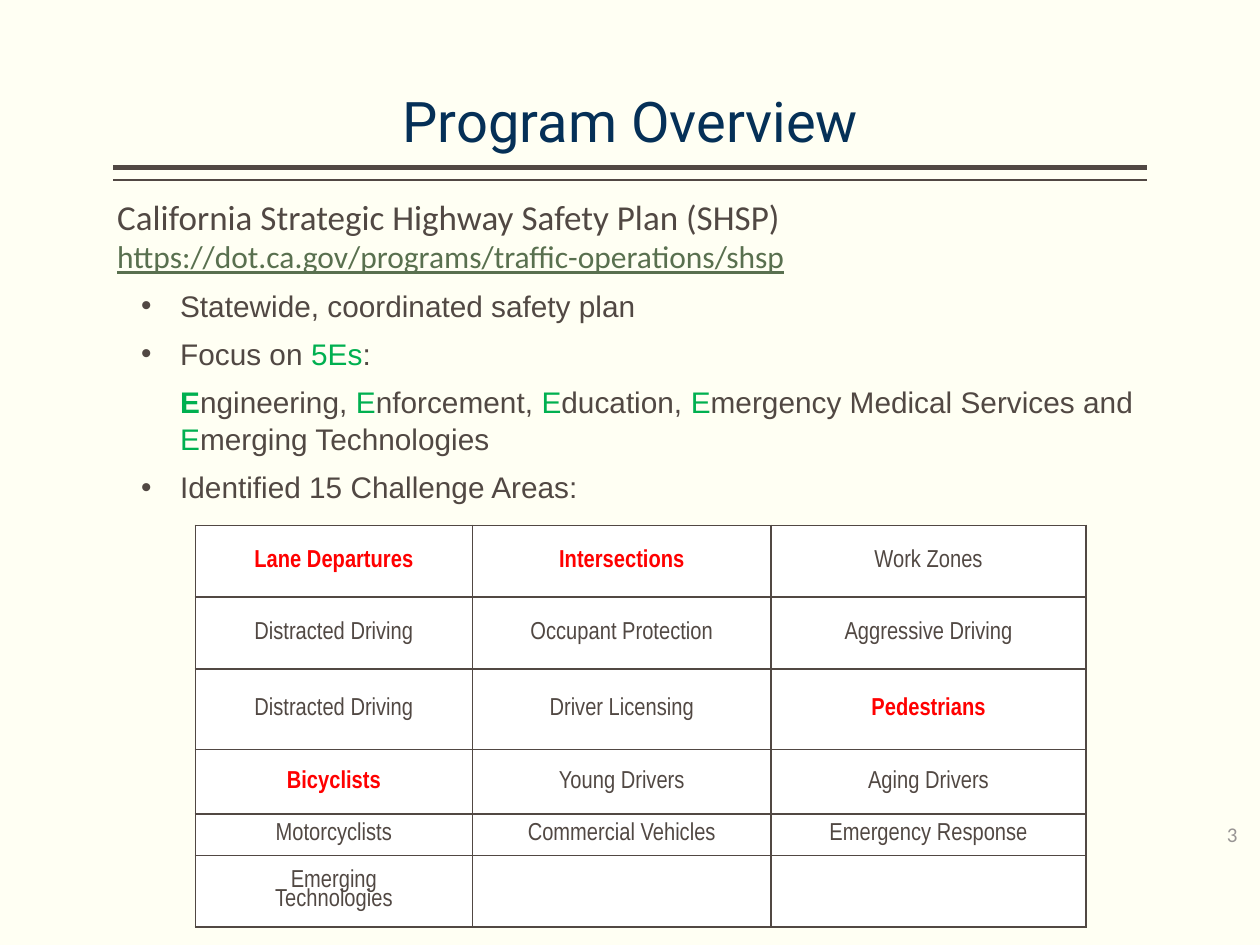
import pptx
import pptx.util
import pptx.dml.color
import pptx.enum.shapes
import pptx.enum.text
from lxml import etree

INK, GREEN, RED = "514843", "00B050", "FF0000"
SLIDE_WIDTH, SLIDE_HEIGHT = 10, 7.5
GRID_COLUMNS = 100
ALIGN = pptx.enum.text.PP_ALIGN
ANCHOR = pptx.enum.text.MSO_ANCHOR

CHALLENGE_AREAS = [
    ["Lane Departures", "Intersections", "Work Zones"],
    ["Distracted Driving", "Occupant Protection", "Aggressive Driving"],
    ["Distracted Driving", "Driver Licensing", "Pedestrians"],
    ["Bicyclists", "Young Drivers", "Aging Drivers"],
    ["Motorcyclists", "Commercial Vehicles", "Emergency Response"],
    ["Emerging\nTechnologies", "", ""],
]
PRIORITY_AREAS = {"Lane Departures", "Intersections", "Pedestrians", "Bicyclists"}
FIVE_ES = ["ngineering, ", "nforcement, ", "ducation, ",
           "mergency Medical Services and ", "merging Technologies"]


def color(value):
    return pptx.dml.color.RGBColor.from_string(value)


def grid(*steps):
    return [pptx.util.Inches(step * SLIDE_WIDTH / GRID_COLUMNS) for step in steps]


def place(shape, *steps):
    shape.left, shape.top, shape.width, shape.height = grid(*steps)


def child(parent, tag, **attributes):
    return etree.SubElement(parent, pptx.oxml.ns.qn(tag), attributes)


def add_run(paragraph, text, size, font, ink=INK, bold=False, underline=False):
    run = paragraph.add_run()
    run.text = text
    run.font.size = pptx.util.Pt(size)
    run.font.name = font
    run.font.color.rgb = color(ink)
    run.font.bold = bold
    run.font.underline = underline


def next_paragraph(frame):
    first = frame.paragraphs[0]
    return frame.add_paragraph() if first.runs else first


def add_line(frame, runs, size, font, indent=0, bullet=False, before=0, spacing=1.0, **style):
    paragraph = next_paragraph(frame)
    properties = paragraph._p.get_or_add_pPr()
    properties.set("marL", str(pptx.util.Inches(indent)))
    properties.set("indent", str(pptx.util.Inches(-0.31 if bullet else 0)))
    if bullet:
        child(properties, "a:buFont", typeface="Arial")
        child(properties, "a:buChar", char="•")
    else:
        child(properties, "a:buNone")
    paragraph.space_before = pptx.util.Pt(before)
    paragraph.line_spacing = spacing
    for text, ink in runs:
        add_run(paragraph, text, size, font, ink, **style)


def add_title(slide, text):
    title = slide.shapes.title
    place(title, 9.1, 0.8, 81.9, 12)
    frame = title.text_frame
    frame.auto_size = pptx.enum.text.MSO_AUTO_SIZE.NONE
    frame.vertical_anchor = ANCHOR.BOTTOM
    frame.margin_left = frame.margin_right = 0
    paragraph = frame.paragraphs[0]
    paragraph.alignment = ALIGN.CENTER
    paragraph.line_spacing = 0.9
    add_run(paragraph, text, 32, "Roboto", "053057")


def add_rule(slide, row, weight):
    rule = slide.shapes.add_connector(
        pptx.enum.shapes.MSO_CONNECTOR.STRAIGHT, *grid(91, row, 9, row))
    rule.line.color.rgb = color(INK)
    rule.line.width = pptx.util.Pt(weight)
    child(rule._element.spPr, "a:effectLst")


def add_overview(slide):
    overview = slide.placeholders[1]
    place(overview, 8.3, 15, 85, 25.1)
    frame = overview.text_frame
    frame.auto_size = pptx.enum.text.MSO_AUTO_SIZE.NONE
    frame.vertical_anchor = ANCHOR.TOP
    add_line(frame, [("California Strategic Highway Safety Plan (SHSP)", INK)], 20, "Calibri")
    add_line(frame, [("https://dot.ca.gov/programs/traffic-operations/shsp", "59704F")],
             18, "Calibri", underline=True)
    points = dict(size=17, font="Arial", indent=0.5, before=6, spacing=1.05)
    add_line(frame, [("Statewide, coordinated safety plan", INK)], bullet=True, **points)
    add_line(frame, [("Focus on ", INK), ("5Es", GREEN), (":", INK)], bullet=True, **points)
    initials = [run for ending in FIVE_ES for run in (("E", GREEN), (ending, INK))]
    add_line(frame, initials, **points)
    frame.paragraphs[-1].runs[0].font.bold = True
    add_line(frame, [("Identified 15 Challenge Areas:", INK)], bullet=True, **points)


def add_borders(cell):
    properties = cell._tc.get_or_add_tcPr()
    for side in ("a:lnL", "a:lnR", "a:lnT", "a:lnB"):
        border = child(properties, side, w=str(pptx.util.Pt(1)))
        child(child(border, "a:solidFill"), "a:srgbClr", val=INK)


def fill_cell(cell, area):
    add_borders(cell)
    cell.fill.solid()
    cell.fill.fore_color.rgb = color("FFFFFF")
    cell.vertical_anchor = ANCHOR.MIDDLE
    priority = area in PRIORITY_AREAS
    for text in area.splitlines():
        paragraph = next_paragraph(cell.text_frame)
        paragraph.alignment = ALIGN.CENTER
        paragraph.line_spacing = 0.8 if "\n" in area else 1.0
        add_run(paragraph, text, 14, "Arial Narrow", RED if priority else INK, priority)


def add_challenge_table(slide):
    widths, heights = grid(22, 23.7, 25), grid(5.7, 5.7, 6.4, 5.1, 3.3, 5.7)
    table = slide.shapes.add_table(
        len(heights), len(widths), *grid(15.5, 41.7), sum(widths), sum(heights)).table
    table.first_row = table.horz_banding = False
    for column, width in zip(table.columns, widths):
        column.width = width
    for row, height, areas in zip(table.rows, heights, CHALLENGE_AREAS):
        row.height = height
        for cell, area in zip(row.cells, areas):
            fill_cell(cell, area)


def add_page_number(slide, number):
    frame = slide.shapes.add_textbox(*grid(94.2, 64.2, 5, 4)).text_frame
    frame.word_wrap = True
    frame.vertical_anchor = ANCHOR.MIDDLE
    frame.paragraphs[0].alignment = ALIGN.RIGHT
    add_run(frame.paragraphs[0], number, 12, "Calibri", "989594")


def main():
    deck = pptx.Presentation()
    deck.slide_width = pptx.util.Inches(SLIDE_WIDTH)
    deck.slide_height = pptx.util.Inches(SLIDE_HEIGHT)
    slide = deck.slides.add_slide(deck.slide_layouts[1])
    slide.background.fill.solid()
    slide.background.fill.fore_color.rgb = color("FFFFF3")
    add_rule(slide, 13.3, 3)
    add_rule(slide, 14.3, 1)
    add_overview(slide)
    add_challenge_table(slide)
    add_title(slide, "Program Overview")
    add_page_number(slide, "3")
    deck.save("out.pptx")


if __name__ == "__main__":
    main()
